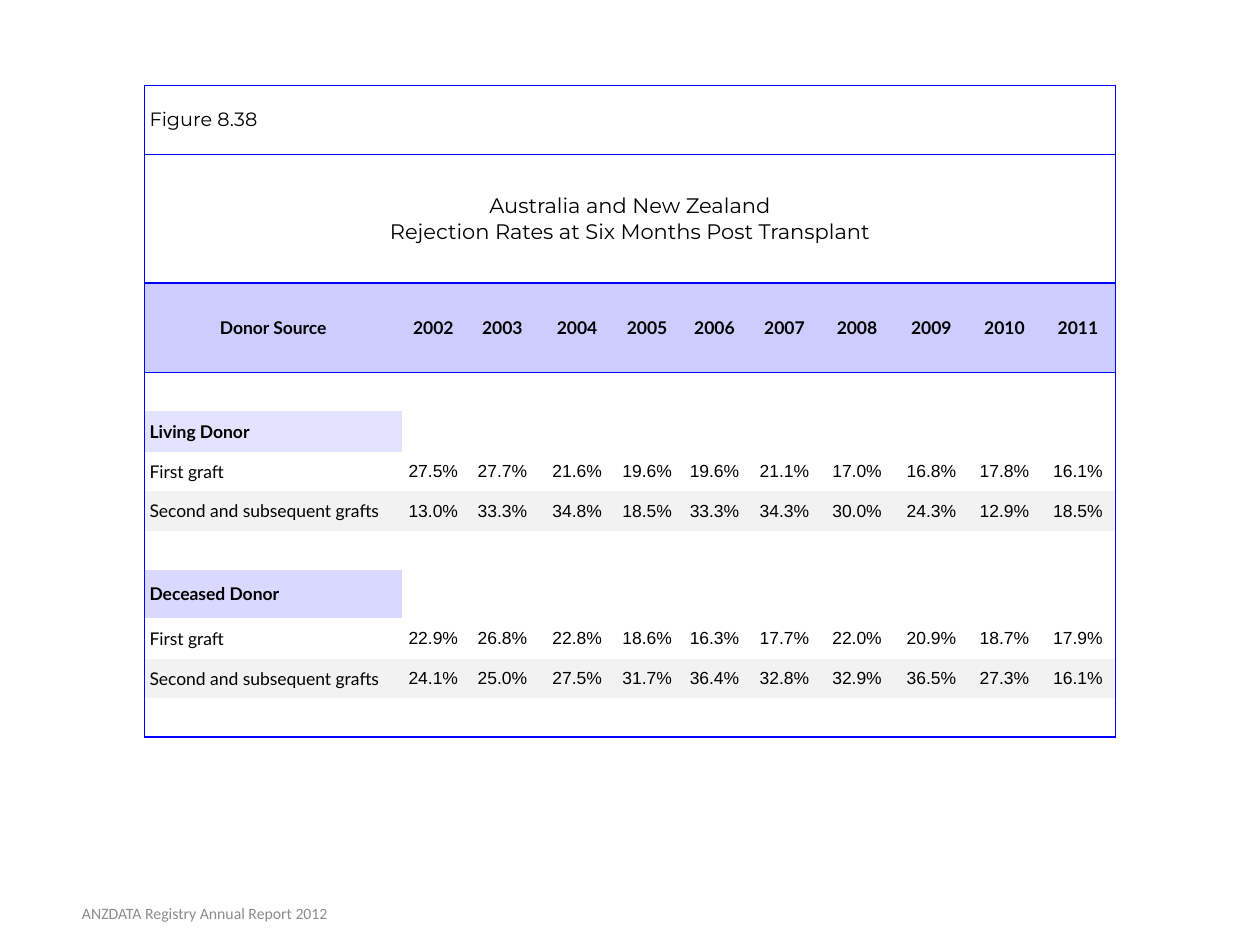
from itertools import product

from lxml.etree import SubElement
from pptx import Presentation
from pptx.dml.color import RGBColor
from pptx.enum.text import MSO_ANCHOR as Anchor, PP_ALIGN as Align
from pptx.oxml.ns import qn
from pptx.util import Pt

COLUMN_WIDTHS = [147, 36, 43, 42.5, 37.5, 39.5, 40.5, 42.5, 42.5, 41, 43]
ROW_HEIGHTS = [39.4, 73.6, 51, 22.3, 23.4, 22.3, 22.8, 22.3, 27.4, 23.4, 22.3, 22.3]
RULED_EDGES = {0, 1, 2, 3, len(ROW_HEIGHTS)}
YEARS = [str(year) for year in range(2002, 2012)]
FIRST, LATER = "First graft", "Second and subsequent grafts"
DONOR_GROUPS = [
    (4, "Living Donor", "E3E3FF", {
        FIRST: [27.5, 27.7, 21.6, 19.6, 19.6, 21.1, 17.0, 16.8, 17.8, 16.1],
        LATER: [13.0, 33.3, 34.8, 18.5, 33.3, 34.3, 30.0, 24.3, 12.9, 18.5],
    }),
    (8, "Deceased Donor", "D9D9FF", {
        FIRST: [22.9, 26.8, 22.8, 18.6, 16.3, 17.7, 22.0, 20.9, 18.7, 17.9],
        LATER: [24.1, 25.0, 27.5, 31.7, 36.4, 32.8, 32.9, 36.5, 27.3, 16.1],
    }),
]


def color(hex_code):
    """Turn a hex string into a colour."""
    return RGBColor.from_string(hex_code)


def style(paragraph, font, size, hex_code="000000", bold=False, align=Align.LEFT):
    """Set the alignment and font of a paragraph."""
    paragraph.alignment = align
    paragraph.font.name = font
    paragraph.font.size = Pt(size)
    paragraph.font.bold = bold
    paragraph.font.color.rgb = color(hex_code)


def rule_cell(cell, sides):
    """Draw blue lines on the given sides of a cell and none on the others."""
    properties = cell._tc.get_or_add_tcPr()
    for side in "LRTB":
        line = SubElement(properties, qn(f"a:ln{side}"), w=str(Pt(1)))
        if side in sides:
            fill = SubElement(line, qn("a:solidFill"))
            SubElement(fill, qn("a:srgbClr"), val="0000FF")
        else:
            SubElement(line, qn("a:noFill"))


def prepare_grid(table):
    """Size the rows and columns and give every cell its margins and rules."""
    for column, width in zip(table.columns, COLUMN_WIDTHS):
        column.width = Pt(width)
    for row, height in zip(table.rows, ROW_HEIGHTS):
        row.height = Pt(height)
    last = len(COLUMN_WIDTHS) - 1
    for row, column in product(range(len(ROW_HEIGHTS)), range(last + 1)):
        cell = table.cell(row, column)
        span_end = column + (cell.span_width if cell.is_merge_origin else 1) - 1
        edges = {"L": column == 0, "R": span_end == last,
                 "T": row in RULED_EDGES, "B": row + 1 in RULED_EDGES}
        rule_cell(cell, [side for side, ruled in edges.items() if ruled])
        cell.fill.background()
        cell.vertical_anchor = Anchor.MIDDLE
        cell.margin_left = cell.margin_right = Pt(2.9)
        cell.margin_top = cell.margin_bottom = Pt(2.9)
        SubElement(cell.text_frame.paragraphs[0]._p, qn("a:endParaRPr"), sz="1000")


def fill_cell(cell, text, font="Lato", size=10, shade=None, space_after=None, **look):
    """Write styled text into a cell, with an optional shade."""
    cell.text = text
    for paragraph in cell.text_frame.paragraphs:
        style(paragraph, font, size, **look)
        if space_after:
            paragraph.space_after = Pt(space_after)
    if shade:
        cell.fill.solid()
        cell.fill.fore_color.rgb = color(shade)


def add_rejection_table(slide, left, top, width, height):
    """Add the table of rejection rates by donor source and year."""
    table = slide.shapes.add_table(len(ROW_HEIGHTS), len(COLUMN_WIDTHS), Pt(left),
                                   Pt(top), Pt(width), Pt(height)).table
    table.first_row = table.horz_banding = False
    for row, start, end in [(0, 0, 5), (0, 6, 10), (1, 0, 10)]:
        table.cell(row, start).merge(table.cell(row, end))
    prepare_grid(table)

    fill_cell(table.cell(0, 0), "Figure 8.38", "Montserrat", 11)
    fill_cell(table.cell(1, 0),
              "Australia and New Zealand\nRejection Rates at Six Months Post Transplant",
              "Montserrat", 12, align=Align.CENTER)
    for column, heading in enumerate(["Donor Source"] + YEARS):
        fill_cell(table.cell(2, column), heading, shade="CCCCFF", bold=True,
                  align=Align.CENTER)
    for group_row, donor, donor_shade, grafts in DONOR_GROUPS:
        fill_cell(table.cell(group_row, 0), donor, shade=donor_shade, bold=True)
        for row, (graft, rates) in enumerate(grafts.items(), group_row + 1):
            shade = "F2F2F2" if graft == LATER else None
            fill_cell(table.cell(row, 0), graft, shade=shade)
            for column, rate in enumerate(rates, 1):
                fill_cell(table.cell(row, column), f"{rate:.1f}%", "Arial", shade=shade,
                          space_after=14, align=Align.CENTER)


def add_footer(slide, left, top, width, height):
    """Add the report name at the foot of the slide."""
    footer = slide.shapes.add_textbox(Pt(left), Pt(top), Pt(width), Pt(height)).text_frame
    footer.word_wrap = True
    footer.vertical_anchor = Anchor.MIDDLE
    footer.text = "ANZDATA Registry Annual Report 2012"
    style(footer.paragraphs[0], "Calibri", 9, "8C8C8C", align=Align.CENTER)


def main():
    """Build and save the slide."""
    deck = Presentation()
    deck.slide_width, deck.slide_height = Pt(720), Pt(540)
    slide = deck.slides.add_slide(deck.slide_layouts[6])
    add_rejection_table(slide, 82.6, 48.8, sum(COLUMN_WIDTHS), sum(ROW_HEIGHTS))
    add_footer(slide, 2.9, 507.6, 228.2, 28.8)
    deck.save("out.pptx")


if __name__ == "__main__":
    main()
